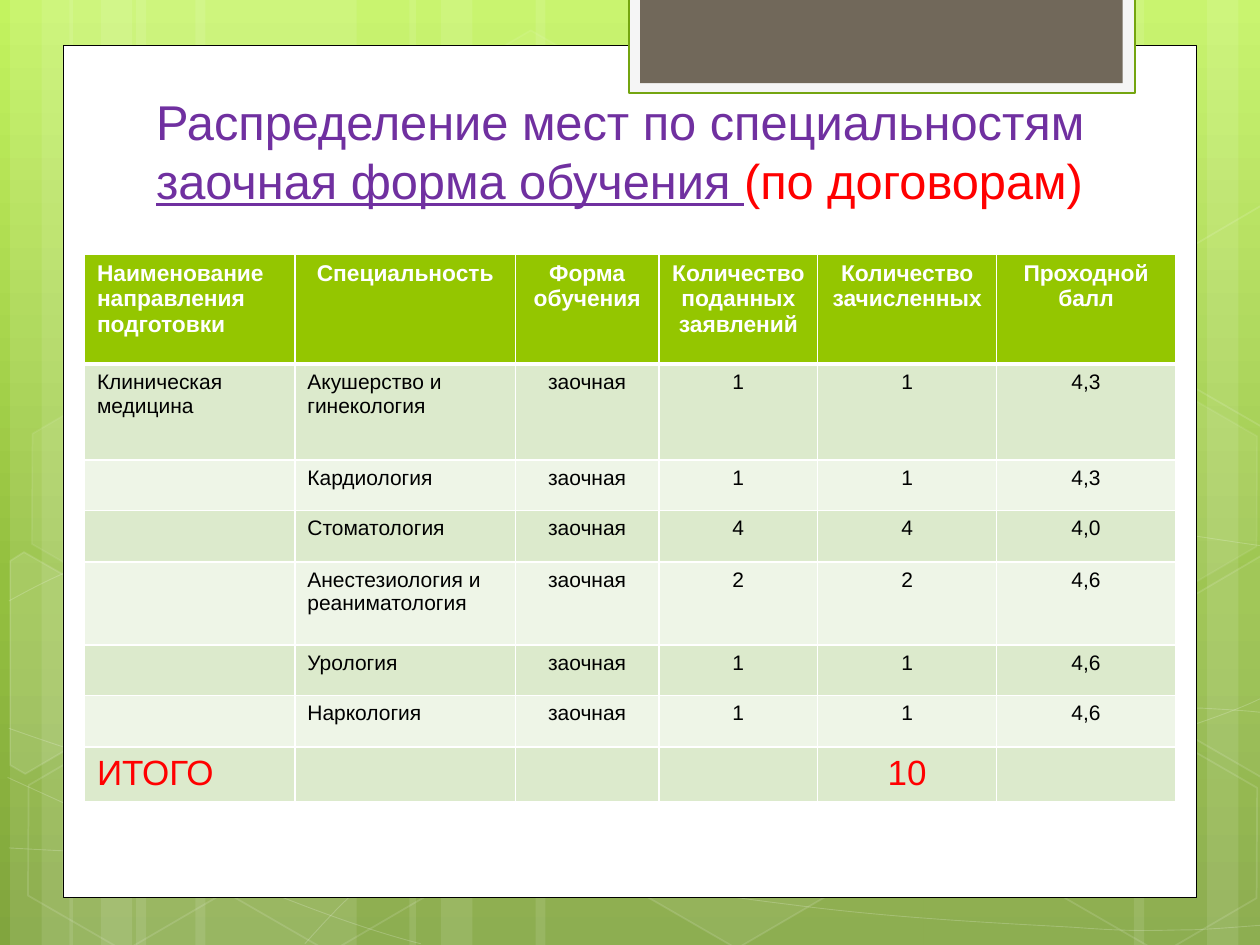
import dataclasses
import math
import typing

import lxml.etree
import pptx
import pptx.dml.color
import pptx.enum.shapes
import pptx.enum.text
import pptx.oxml
import pptx.oxml.ns
import pptx.util

Inches = pptx.util.Inches
Point = tuple[float, float]
CENTER = pptx.enum.text.PP_ALIGN.CENTER
LEFT = pptx.enum.text.PP_ALIGN.LEFT


@dataclasses.dataclass(frozen=True)
class Theme:
    font: str = "Arial"
    white: str = "FFFFFF"
    black: str = "000000"
    red: str = "FF0000"
    purple: str = "7030A0"
    green: str = "94C600"
    tab_line: str = "74A510"
    tab_edge: str = "F5F5F5"
    tab: str = "71685A"
    bands: tuple[str, str] = ("DCEACC", "EEF5E7")
    sky: tuple[tuple[int, str], ...] = ((0, "C3F35F"), (62, "93BF3F"), (100, "81A53E"))
    title_size: float = 27.9
    header_size: float = 13
    body_size: float = 12
    total_size: float = 20


@dataclasses.dataclass(frozen=True)
class Paint:
    color: str
    opacity: int = 100
    width: float = 0


class Box(typing.NamedTuple):
    left: float
    top: float
    width: float
    height: float


class Hexagon(typing.NamedTuple):
    left: float
    top: float
    fill: int
    line: int


class Fragment(typing.NamedTuple):
    center: Point
    points: list[Point]
    fill: int


class Curve(typing.NamedTuple):
    points: list[Point]
    straight: int = -1


THEME = Theme()
TILT = 30
STRIPES = [(1.08, 1.75), (0.08, 0.5), (0.33, 0.83), (1.55, 1.75), (0.55, 0.5), (0.8, 0.83),
           (7.33, 1.75), (9.58, 0.5), (9, 0.83), (4.25, 3.08), (3.25, 0.5), (3.5, 0.83)]
CURVES = [
    Curve([(0.07, 6.73), (0.61, 6.76), (1.15, 6.79), (1.9, 6.78), (2.65, 6.77), (3.58, 6.75), (4.58, 6.65),
           (5.58, 6.55), (7, 6.36), (7.92, 6.17), (8.83, 5.98), (9.77, 5.68), (10.07, 5.51)]),
    Curve([(0.07, 4.77), (0.36, 4.61), (0.65, 4.46), (1.21, 4.31), (1.78, 4.16), (2.59, 3.94), (3.47, 3.87),
           (4.36, 3.8), (5.44, 3.79), (6.54, 3.87), (7.64, 3.95), (9.47, 4.26), (10.07, 4.34)]),
    Curve([(0.06, 6.17), (1.27, 6.72), (2.47, 7.27), (3.34, 7.49)]),
    Curve([(0.07, 5.78), (0.38, 5.89), (0.7, 6), (1.28, 6.16), (1.86, 6.31), (2.73, 6.56), (3.57, 6.73),
           (4.4, 6.9), (5.45, 7.08), (6.28, 7.18), (7.11, 7.29), (8, 7.33), (8.53, 7.36),
           (9.05, 7.4), (9.19, 7.38), (9.45, 7.38), (9.71, 7.37), (9.89, 7.35), (10.07, 7.34)]),
    Curve([(2.42, 7.49), (2.6, 7.29), (2.78, 7.09), (3.02, 6.91), (3.26, 6.73), (3.6, 6.53), (3.88, 6.39),
           (4.16, 6.25), (4.33, 6.19), (4.7, 6.09), (5.06, 5.99), (5.73, 5.85), (6.08, 5.78),
           (6.44, 5.71), (6.49, 5.71), (6.8, 5.69), (7.11, 5.66), (7.6, 5.63), (7.94, 5.62),
           (8.29, 5.61), (8.86, 5.62), (8.86, 5.62), (9.53, 5.62),
           (9.71, 5.63), (9.88, 5.64), (9.97, 5.65), (10.06, 5.66), (10.03, 5.65), (10.06, 5.66)], 21),
]
HEXAGONS = [
    Hexagon(3.34, 0.36, 4, 8), Hexagon(4.97, 5.89, 6, 12), Hexagon(0.11, 5.91, 0, 12),
    Hexagon(0.14, 3.12, 7, 8), Hexagon(1.74, 5.92, 0, 12), Hexagon(7.53, 4.53, 10, 12),
    Hexagon(8.34, 5.93, 0, 12), Hexagon(8.34, 3.14, 7, 8),
]
FRAGMENTS = [
    Fragment((0.36, 5.35), [(0.08, 4.45), (0.19, 4.38), (0.96, 4.82), (0.95, 5.7), (0.2, 6.14), (0.08, 6.07)], 10),
    Fragment((9.85, 5.2), [(9.26, 4.85), (10.01, 4.41), (10.09, 4.46), (10.09, 6.13), (10.02, 6.17), (9.26, 5.73)], 4),
    Fragment((9.85, 2.41), [(9.26, 2.07), (10.01, 1.63), (10.1, 1.68), (10.09, 3.35), (10.02, 3.39), (9.26, 2.95)], 0),
]
COLUMNS = [1.67, 1.75, 1.14, 1.26, 1.42, 1.42]
ROWS = [0.87, 0.76, 0.4, 0.41, 0.66, 0.4, 0.41, 0.41]
HEADER = ["Наименование направления подготовки", "Специальность", "Форма обучения",
          "Количество\nподанных заявлений", "Количество зачисленных", "Проходной балл"]
SPECIALTIES = [("Акушерство и гинекология", 1, "4,3"), ("Кардиология", 1, "4,3"), ("Стоматология", 4, "4,0"),
               ("Анестезиология и реаниматология", 2, "4,6"), ("Урология", 1, "4,6"), ("Наркология", 1, "4,6")]


def rgb(color: str) -> pptx.dml.color.RGBColor:
    return pptx.dml.color.RGBColor.from_string(color)


def apply_color(fill, paint: Paint) -> None:
    fill.solid()
    fill.fore_color.rgb = rgb(paint.color)
    if paint.opacity < 100:
        color = fill._xPr.find(".//" + pptx.oxml.ns.qn("a:srgbClr"))
        lxml.etree.SubElement(color, pptx.oxml.ns.qn("a:alpha"), val=str(paint.opacity * 1000))


def paint_shape(shape, fill: Paint | None = None, line: Paint | None = None) -> None:
    shape.shadow.inherit = False
    for target, paint in ((shape.fill, fill), (shape.line.fill, line)):
        if paint and paint.opacity:
            apply_color(target, paint)
        else:
            target.background()
    if line:
        shape.line.width = pptx.util.Pt(line.width)


def add_preset(slide, kind, box: Box, fill: Paint | None = None, line: Paint | None = None):
    shape = slide.shapes.add_shape(kind, *map(Inches, box))
    paint_shape(shape, fill, line)
    return shape


def add_outline(slide, points: list[Point], closed: bool, fill: Paint | None, line: Paint):
    scaled = [(Inches(x), Inches(y)) for x, y in points]
    builder = slide.shapes.build_freeform(*scaled[0])
    builder.add_line_segments(scaled[1:], close=closed)
    shape = builder.convert_to_shape()
    paint_shape(shape, fill, line)
    return shape


def add_curve(slide, curve: Curve) -> None:
    shape = add_outline(slide, curve.points, False, None, Paint(THEME.white, 20, 0.5))
    steps = list(shape._element.iter(pptx.oxml.ns.qn("a:lnTo")))
    start = 0
    while start < len(steps):
        if start == curve.straight:
            start += 1
            continue
        bend = lxml.etree.Element(pptx.oxml.ns.qn("a:cubicBezTo"))
        steps[start].addprevious(bend)
        for step in steps[start:start + 3]:
            bend.append(step[0])
            step.getparent().remove(step)
        start += 3


def add_fragment(slide, fragment: Fragment) -> None:
    cosine, sine = math.cos(math.radians(TILT)), math.sin(math.radians(TILT))
    middle_x, middle_y = fragment.center
    offsets = [(x - middle_x, y - middle_y) for x, y in fragment.points]
    upright = [(middle_x + x * cosine + y * sine, middle_y - x * sine + y * cosine) for x, y in offsets]
    shape = add_outline(slide, upright, True, Paint(THEME.white, fragment.fill), Paint(THEME.white, 12, 1))
    shape.rotation = TILT


def draw_background(slide) -> None:
    fill = slide.background.fill
    fill.gradient()
    gradient = fill._xPr.find(pptx.oxml.ns.qn("a:gradFill"))
    stops = "".join(f'<a:gs pos="{pos * 1000}"><a:srgbClr val="{color}"/></a:gs>' for pos, color in THEME.sky)
    fresh = pptx.oxml.parse_xml(f'<a:gradFill {pptx.oxml.ns.nsdecls("a")} rotWithShape="1">'
                                f'<a:gsLst>{stops}</a:gsLst><a:lin ang="5400000" scaled="0"/></a:gradFill>')
    gradient.getparent().replace(gradient, fresh)


def draw_decoration(slide) -> None:
    shapes = pptx.enum.shapes.MSO_SHAPE
    for left, width in STRIPES:
        add_preset(slide, shapes.RECTANGLE, Box(left, 0, width, 7.5), Paint(THEME.white, 10))
    for curve in CURVES:
        add_curve(slide, curve)
    for hexagon in HEXAGONS:
        shape = add_preset(slide, shapes.HEXAGON, Box(hexagon.left, hexagon.top, 1.75, 1.52),
                           Paint(THEME.white, hexagon.fill), Paint(THEME.white, hexagon.line, 1))
        shape.adjustments[0], shape.adjustments[1] = 0.285, 1.155
        shape.rotation = TILT
    for fragment in FRAGMENTS:
        add_fragment(slide, fragment)
    for box, fill, line in (
        (Box(0.5, 0.36, 9, 6.76), THEME.white, Paint(THEME.black, width=0.5)),
        (Box(4.99, -0.02, 4.02, 0.76), THEME.tab_edge, Paint(THEME.tab_line, width=1.25)),
        (Box(5.08, -0.02, 3.83, 0.68), THEME.tab, None),
    ):
        add_preset(slide, shapes.RECTANGLE, box, Paint(fill), line)


def draw_title(slide) -> None:
    frame = slide.shapes.add_textbox(*map(Inches, Box(1.14, 0.73, 7.68, 1.42))).text_frame
    frame.word_wrap = True
    frame.margin_top = 0
    para = frame.paragraphs[0]
    para.font.name, para.font.size = THEME.font, pptx.util.Pt(THEME.title_size)
    for text, color, underlined in (("Распределение мест по специальностям", THEME.purple, False),
                                    ("заочная форма обучения ", THEME.purple, True),
                                    ("(по договорам)", THEME.red, False)):
        if underlined:
            para.add_line_break()
        span = para.add_run()
        span.text = text
        span.font.color.rgb = rgb(color)
        span.font.underline = underlined


def add_borders(cell, bottom: float) -> None:
    properties = cell._tc.get_or_add_tcPr()
    for index, (side, width) in enumerate((("L", 1), ("R", 1), ("T", 1), ("B", bottom))):
        properties.insert(index, pptx.oxml.parse_xml(
            f'<a:ln{side} {pptx.oxml.ns.nsdecls("a")} w="{pptx.util.Pt(width)}"><a:solidFill>'
            f'<a:srgbClr val="{THEME.white}"/></a:solidFill></a:ln{side}>'))


def draw_table(slide) -> None:
    body = [["Клиническая медицина" if index == 0 else "", name, "заочная", str(count), str(count), score]
            for index, (name, count, score) in enumerate(SPECIALTIES)]
    total = ["ИТОГО", "", "", "", str(sum(count for _, count, _ in SPECIALTIES)), ""]
    values = [HEADER, *body, total]
    box = Box(0.67, 2.02, sum(COLUMNS), sum(ROWS))
    table = slide.shapes.add_table(len(ROWS), len(COLUMNS), *map(Inches, box)).table
    for column, width in zip(table.columns, COLUMNS):
        column.width = Inches(width)
    for index, (row, height, texts) in enumerate(zip(table.rows, ROWS, values)):
        row.height = Inches(height)
        fill, size, color = THEME.bands[(index - 1) % 2], THEME.body_size, THEME.black
        if index == 0:
            fill, size, color = THEME.green, THEME.header_size, THEME.white
        elif texts is total:
            size, color = THEME.total_size, THEME.red
        for position, (cell, text) in enumerate(zip(row.cells, texts)):
            cell.text = text
            apply_color(cell.fill, Paint(fill))
            add_borders(cell, 3 if index == 0 else 1)
            for para in cell.text_frame.paragraphs:
                para.alignment = LEFT if position == 0 or (position == 1 and index) else CENTER
                para.font.name, para.font.size = THEME.font, pptx.util.Pt(size if text else THEME.body_size)
                para.font.bold = index == 0
                para.font.color.rgb = rgb(color)


def main() -> None:
    deck = pptx.Presentation()
    deck.slide_width, deck.slide_height = Inches(10), Inches(7.5)
    page = deck.slides.add_slide(deck.slide_layouts[6])
    draw_background(page)
    draw_decoration(page)
    draw_title(page)
    draw_table(page)
    deck.save("out.pptx")


if __name__ == "__main__":
    main()
